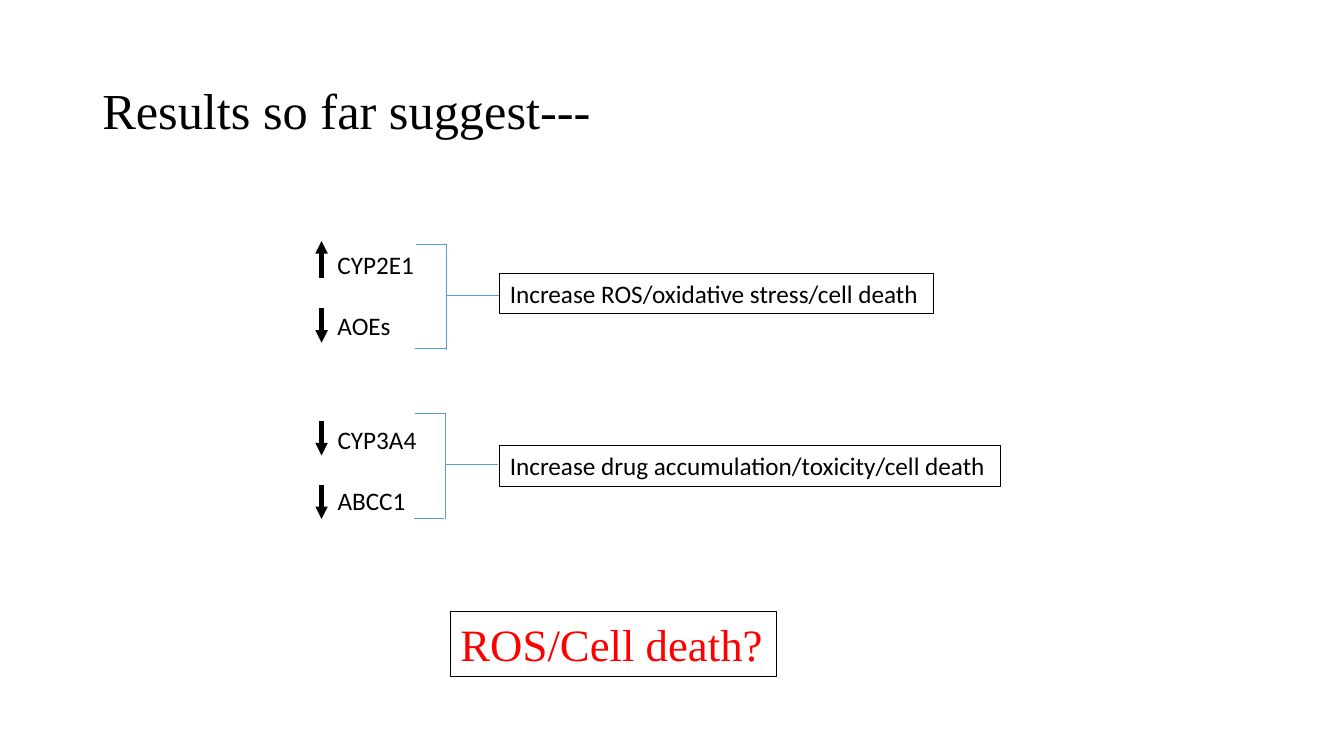
"""Build the slide that sums up the results so far."""
from dataclasses import dataclass

from lxml import etree
from pptx import Presentation
from pptx.dml.color import RGBColor
from pptx.enum.shapes import MSO_CONNECTOR, MSO_SHAPE
from pptx.enum.text import MSO_ANCHOR, PP_ALIGN
from pptx.oxml.ns import qn
from pptx.shapes.autoshape import Shape
from pptx.shapes.connector import Connector
from pptx.slide import Slide
from pptx.util import Pt

STRAIGHT = MSO_CONNECTOR.STRAIGHT
RECT = MSO_SHAPE.RECTANGLE
TOP, MIDDLE = MSO_ANCHOR.TOP, MSO_ANCHOR.MIDDLE
LEFT = PP_ALIGN.LEFT
BLACK = RGBColor(0x00, 0x00, 0x00)
BLUE = RGBColor(0x5B, 0x9B, 0xD5)
RED = RGBColor(0xFF, 0x00, 0x00)
SANS, SERIF = "Calibri", "Times New Roman"
ARROW_X = 229.7
STUB = 21.6
LINK_DROP = 36.7
BRACKET_H = 75.6


@dataclass(frozen=True)
class Style:
    font: str
    size: float
    color: RGBColor = BLACK


@dataclass(frozen=True)
class Area:
    x: float
    y: float
    w: float
    h: float


@dataclass(frozen=True)
class Arrow:
    start: float
    end: float


@dataclass(frozen=True)
class Group:
    genes: tuple[str, ...]
    label: Area
    arrows: tuple[Arrow, ...]
    x: float
    y: float
    link: float
    effect: str
    box: Area


BODY = Style(SANS, 18)
TITLE = Style(SERIF, 36)
CLAIM = Style(SERIF, 32, RED)

GROUPS = (
    Group(("CYP2E1", "AOEs"), Area(234, 174.2, 69.8, 94.3),
          (Arrow(198.7, 172.1), Arrow(220.3, 244.8)),
          319, 174.2, 357.1,
          "Increase ROS/oxidative stress/cell death",
          Area(357.1, 195.1, 309.6, 29.1)),
    Group(("CYP3A4", "ABCC1"), Area(234, 299.5, 71.3, 94.3),
          (Arrow(301, 325.4), Arrow(346.3, 370.8)),
          318.2, 295.2, 355.7,
          "Increase drug accumulation/toxicity/cell death",
          Area(357.1, 318.2, 357.8, 29.1)),
)


def write(shape: Shape, lines: tuple[str, ...], style: Style,
          anchor: MSO_ANCHOR = TOP, wrap: bool = False, gap: float = 0,
          pitch: float = 1.0) -> None:
    frame = shape.text_frame
    frame.word_wrap = wrap
    frame.vertical_anchor = anchor
    for i, line in enumerate(lines):
        para = frame.add_paragraph() if i else frame.paragraphs[0]
        para.alignment = LEFT
        para.line_spacing = pitch
        para.space_before = Pt(gap if i else 0)
        run = para.add_run()
        run.text = line
        run.font.name = style.font
        run.font.size = Pt(style.size)
        run.font.color.rgb = style.color


def add_text(slide: Slide, area: Area) -> Shape:
    return slide.shapes.add_textbox(Pt(area.x), Pt(area.y), Pt(area.w), Pt(area.h))


def add_box(slide: Slide, area: Area, text: str, style: Style) -> None:
    box = slide.shapes.add_shape(RECT, Pt(area.x), Pt(area.y), Pt(area.w), Pt(area.h))
    box.shadow.inherit = False
    box.fill.background()
    box.line.color.rgb = BLACK
    box.line.width = Pt(0.75)
    write(box, (text,), style)


def add_line(slide: Slide, x1: float, y1: float, x2: float, y2: float,
             color: RGBColor, width: float) -> Connector:
    line = slide.shapes.add_connector(STRAIGHT, Pt(x1), Pt(y1), Pt(x2), Pt(y2))
    line.line.color.rgb = color
    line.line.width = Pt(width)
    etree.SubElement(line._element.spPr, qn("a:effectLst"))
    return line


def add_arrow(slide: Slide, arrow: Arrow) -> None:
    line = add_line(slide, ARROW_X, arrow.start, ARROW_X, arrow.end, BLACK, 3)
    etree.SubElement(line.line._get_or_add_ln(), qn("a:tailEnd"), type="triangle")


def add_group(slide: Slide, group: Group) -> None:
    write(add_text(slide, group.label), group.genes, BODY, gap=22)
    for arrow in group.arrows:
        add_arrow(slide, arrow)
    x, top, base = group.x, group.y, group.y + BRACKET_H
    mid = top + LINK_DROP
    for ends in ((x, top, x, base), (x, top, x - STUB, top),
                 (x - 0.7, base - 0.7, x - 0.7 - STUB, base - 0.7),
                 (x, mid, group.link, mid)):
        add_line(slide, *ends, BLUE, 0.5)
    add_box(slide, group.box, group.effect, BODY)


def main() -> None:
    deck = Presentation()
    deck.slide_width, deck.slide_height = Pt(960), Pt(540)
    slide = deck.slides.add_slide(deck.slide_layouts[6])
    title = add_text(slide, Area(66, 28.8, 828, 104.4))
    write(title, ("Results so far suggest---",), TITLE, MIDDLE, True, pitch=0.9)
    for group in GROUPS:
        add_group(slide, group)
    add_box(slide, Area(321.8, 437, 232.6, 46.1), "ROS/Cell death?", CLAIM)
    deck.save("out.pptx")


if __name__ == "__main__":
    main()
